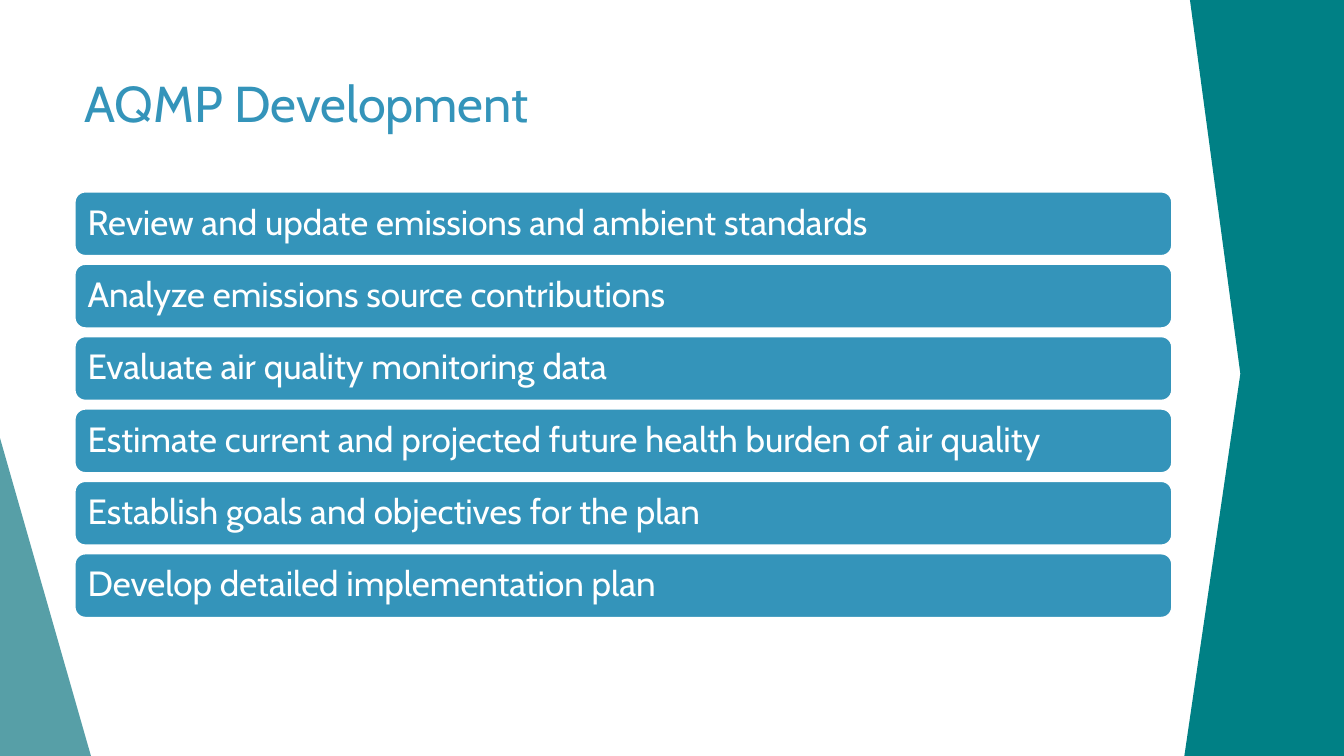
from dataclasses import dataclass

from lxml import etree
from pptx import Presentation
from pptx.dml.color import RGBColor
from pptx.enum.shapes import MSO_SHAPE
from pptx.enum.text import MSO_ANCHOR, PP_ALIGN
from pptx.oxml.ns import qn
from pptx.shapes.autoshape import Shape
from pptx.slide import Slide
from pptx.util import Pt

ROUNDED = MSO_SHAPE.ROUNDED_RECTANGLE
RIGHT_TRIANGLE = MSO_SHAPE.RIGHT_TRIANGLE
TOP, MIDDLE = MSO_ANCHOR.TOP, MSO_ANCHOR.MIDDLE
LEFT = PP_ALIGN.LEFT

SLIDE_W, SLIDE_H = 960, 540
FONT = "Cabin"
BLUE, TEAL, PALE_TEAL, WHITE = "3494BA", "008085", "3A8F98", "FFFFFF"

BAR_LEFT, BAR_TOP = 53.3, 136.8
BAR_W, BAR_H, BAR_PITCH = 784, 46, 51.7


@dataclass
class Step:
    text: str
    row: int

    @property
    def top(self) -> float:
        return BAR_TOP + self.row * BAR_PITCH


STEPS = [
    Step(text, row)
    for row, text in enumerate([
        "Review and update emissions and ambient standards",
        "Analyze emissions source contributions",
        "Evaluate air quality monitoring data",
        "Estimate current and projected future health burden of air quality",
        "Establish goals and objectives for the plan",
        "Develop detailed implementation plan",
    ])
]


def rgb(value: str) -> RGBColor:
    return RGBColor.from_string(value)


def paint(sp: Shape, color: str) -> None:
    sp.shadow.inherit = False
    sp.fill.solid()
    sp.fill.fore_color.rgb = rgb(color)
    sp.line.fill.background()


def write(sp: Shape, text: str, size: float, color: str, anchor: MSO_ANCHOR) -> None:
    tf = sp.text_frame
    tf.word_wrap = True
    tf.vertical_anchor = anchor
    p = tf.paragraphs[0]
    p.text = text
    p.alignment = LEFT
    p.font.name = FONT
    p.font.size = Pt(size)
    p.font.color.rgb = rgb(color)


def draw_side_shapes(s: Slide) -> None:
    sp = s.shapes.add_shape(RIGHT_TRIANGLE, Pt(-1.4), Pt(308), Pt(66.4), Pt(232))
    paint(sp, PALE_TEAL)
    fill_color = sp.fill._xPr.find(qn("a:solidFill"))[0]
    etree.SubElement(fill_color, qn("a:alpha"), val="85000")

    builder = s.shapes.build_freeform(SLIDE_W, 0, scale=Pt(1))
    builder.add_line_segments(
        [(SLIDE_W, SLIDE_H), (846, SLIDE_H), (886, 267), (850, 0)], close=True
    )
    paint(builder.convert_to_shape(), TEAL)


def draw_title(s: Slide, text: str) -> None:
    sp = s.shapes.add_textbox(Pt(53.3), Pt(48.2), Pt(858), Pt(104))
    write(sp, text, 36, BLUE, TOP)


def draw_step(s: Slide, step: Step) -> None:
    sp = s.shapes.add_shape(
        ROUNDED, Pt(BAR_LEFT), Pt(step.top), Pt(BAR_W), Pt(BAR_H)
    )
    paint(sp, BLUE)
    sp.line.color.rgb = rgb(WHITE)
    sp.line.width = Pt(1.5)
    write(sp, step.text, 25, WHITE, MIDDLE)
    sp.text_frame.paragraphs[0].line_spacing = 0.9


def main() -> None:
    prs = Presentation()
    prs.slide_width, prs.slide_height = Pt(SLIDE_W), Pt(SLIDE_H)
    s = prs.slides.add_slide(prs.slide_layouts[6])
    draw_side_shapes(s)
    draw_title(s, "AQMP Development")
    for step in STEPS:
        draw_step(s, step)
    prs.save("out.pptx")


if __name__ == "__main__":
    main()
